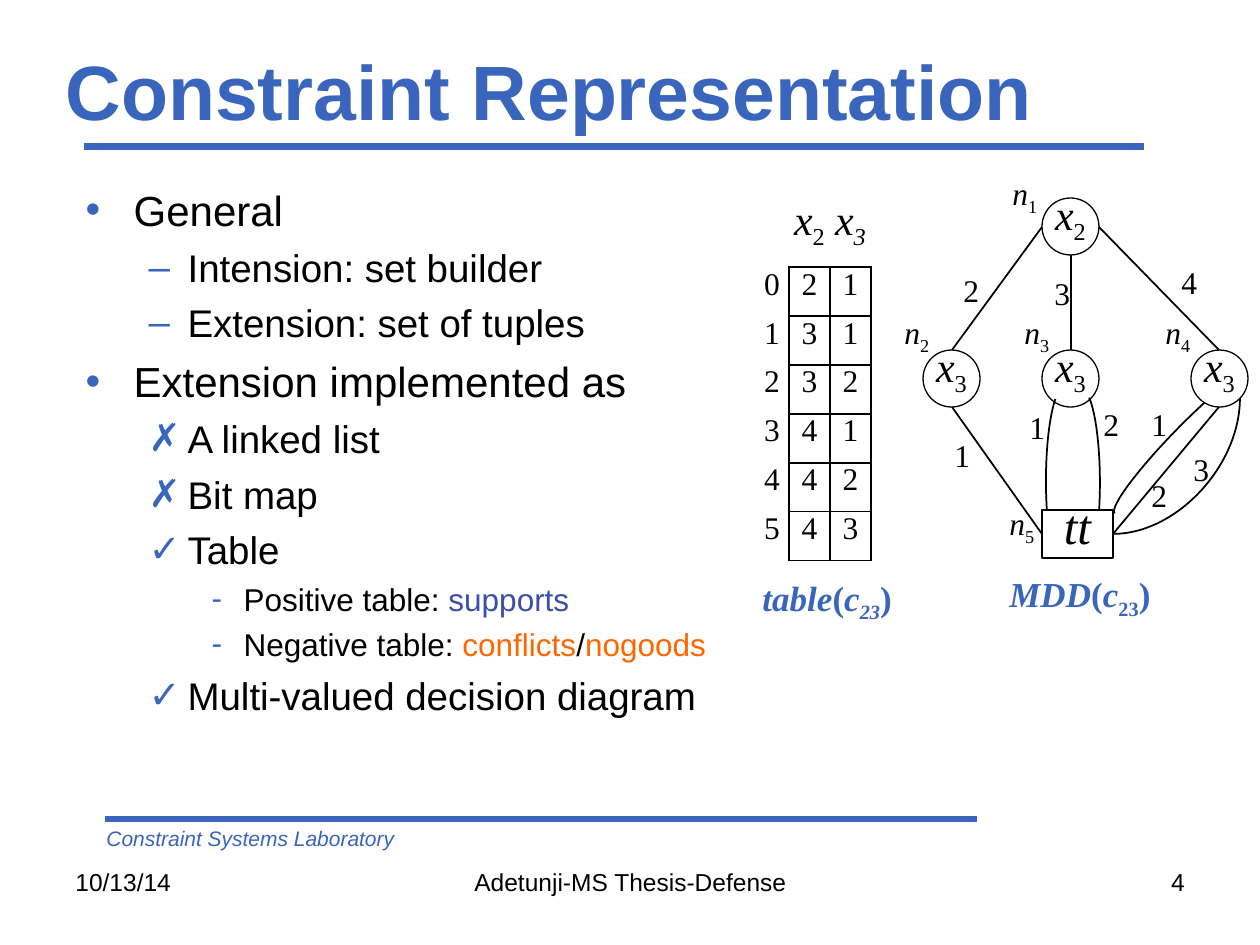
from lxml import etree
from pptx import Presentation
from pptx.dml.color import RGBColor
from pptx.enum.shapes import MSO_CONNECTOR, MSO_SHAPE
from pptx.enum.text import MSO_ANCHOR, MSO_AUTO_SIZE, PP_ALIGN
from pptx.oxml.ns import qn
from pptx.util import Pt

SCALE = 914400 / 126
LEFT, MID, RIGHT = PP_ALIGN.LEFT, PP_ALIGN.CENTER, PP_ALIGN.RIGHT
CENTER = MSO_ANCHOR.MIDDLE
FIXED = MSO_AUTO_SIZE.NONE
OVAL, RECT, ARC = MSO_SHAPE.OVAL, MSO_SHAPE.RECTANGLE, MSO_SHAPE.ARC
LINE, CURVE = MSO_CONNECTOR.STRAIGHT, MSO_CONNECTOR.CURVE
SANS, SERIF = "Arial", "Times New Roman"
HUE = {"blue": "3A65BC", "black": "000000", "white": "FFFFFF",
       "support": "3A4EAC", "conflict": "FF6600"}
DOT = 57

POINTS = [
    (0, "•", [("General", "black")]),
    (1, "–", [("Intension: set builder", "black")]),
    (1, "–", [("Extension: set of tuples", "black")]),
    (0, "•", [("Extension implemented as", "black")]),
    (1, "✗", [("A linked list", "black")]),
    (1, "✗", [("Bit map", "black")]),
    (1, "✓", [("Table", "black")]),
    (2, "-", [("Positive table: ", "black"), ("supports", "support")]),
    (2, "-", [("Negative table: ", "black"), ("conflicts", "conflict"),
              ("/", "black"), ("nogoods", "conflict")]),
    (1, "✓", [("Multi-valued decision diagram", "black")]),
]
LEVELS = [(24, 48, 48), (22, 102, 39), (18, 158, 32)]
TUPLES = [(2, 1), (3, 1), (3, 2), (4, 1), (4, 2), (4, 3)]
NAMES = [("1", 1000, 168, 74), ("2", 892, 307, 54), ("3", 1012, 307, 53),
         ("4", 1153, 307, 52), ("5", 997, 498, 74)]
VALUES = [("2", 951, 265), ("3", 1042, 268), ("4", 1169, 257),
          ("1", 942, 430), ("1", 1017, 402), ("2", 1091, 399),
          ("1", 1139, 399), ("2", 1139, 470), ("3", 1181, 444)]
ARCS = [((1046, 387, 37, 188), (165.79, 35.51), 0, True),
        ((1063, 389, 37, 188), (165.13, 34.58), 0, False),
        ((1171, 340, 28, 202), (162, 43.61), 224.2, False)]


def px(*nums):
    return [round(n * SCALE) for n in nums]


def rgb(hue):
    return RGBColor.from_string(HUE[hue])


def add_run(para, text, size, hue="black", face=SERIF, style=""):
    run = para.add_run()
    run.text = text
    font = run.font
    font.size, font.name = Pt(size), face
    font.bold, font.italic = "b" in style, "i" in style
    font.color.rgb = rgb(hue)
    if "s" in style:
        run._r.get_or_add_rPr().set("baseline", "-25000")


def add_text(slide, box, runs, size, hue="black", face=SERIF, align=LEFT):
    frame = slide.shapes.add_textbox(*px(*box)).text_frame
    frame.word_wrap = True
    para = frame.paragraphs[0]
    para.alignment = align
    for text, style in runs:
        add_run(para, text, size, hue, face, style)


def add_line(slide, start, end, hue="black", width=1, kind=LINE):
    line = slide.shapes.add_connector(kind, *px(*start, *end))
    line.line.color.rgb = rgb(hue)
    line.line.width = Pt(width)
    etree.SubElement(line.element.spPr, qn("a:effectLst"))
    return line


def add_node(slide, kind, box, runs, size):
    node = slide.shapes.add_shape(kind, *px(*box))
    node.shadow.inherit = False
    node.fill.solid()
    node.fill.fore_color.rgb = rgb("white")
    node.line.color.rgb = rgb("black")
    node.line.width = Pt(0.75)
    frame = node.text_frame
    frame.margin_left = frame.margin_right = frame.margin_top = 0
    frame.margin_bottom = px(19)[0]
    frame.vertical_anchor = CENTER
    para = frame.paragraphs[0]
    para.alignment = MID
    for text, style in runs:
        add_run(para, text, size, style=style)
    return node


def add_arc(slide, box, sweep, turn, flip):
    arc = slide.shapes.add_shape(ARC, *px(*box))
    arc.shadow.inherit = False
    arc.fill.background()
    arc.line.color.rgb = rgb("black")
    arc.line.width = Pt(1)
    arc.adjustments[0], arc.adjustments[1] = sweep
    arc.rotation = turn
    if flip:
        arc.element.spPr.find(qn("a:xfrm")).set("flipH", "1")


def place(shape, box):
    shape.left, shape.top, shape.width, shape.height = px(*box)


def fill_title(shape):
    place(shape, (53, 42, 1134, 95))
    shape.text_frame.vertical_anchor = CENTER
    shape.text_frame.auto_size = FIXED
    para = shape.text_frame.paragraphs[0]
    para.alignment = LEFT
    add_run(para, "Constraint Representation", 44, "blue", SANS, "b")


def fill_body(shape):
    place(shape, (73, 178, 1124, 620))
    frame = shape.text_frame
    frame.auto_size = FIXED
    for num, (level, mark, runs) in enumerate(POINTS):
        para = frame.add_paragraph() if num else frame.paragraphs[0]
        size, left, hang = LEVELS[level]
        para.level = level
        props = para._p.get_or_add_pPr()
        props.set("marL", str(px(left)[0]))
        props.set("indent", str(px(-hang)[0]))
        tint = etree.SubElement(props, qn("a:buClr"))
        etree.SubElement(tint, qn("a:srgbClr"), val=HUE["blue"])
        etree.SubElement(props, qn("a:buFont"), typeface=SANS)
        etree.SubElement(props, qn("a:buChar"), char=mark)
        para.space_before = Pt(size * 0.24 if num else 0)
        for text, hue in runs:
            add_run(para, text, size, hue, SANS)


def set_edges(cell, row, col):
    inner = row and col
    props = cell._tc.get_or_add_tcPr()
    edges = [("L", inner), ("R", row), ("T", inner), ("B", col)]
    for num, (side, dark) in enumerate(edges):
        edge = etree.Element(qn("a:ln" + side), w=str(Pt(1)))
        fill = etree.SubElement(edge, qn("a:solidFill"))
        hue = HUE["black" if dark else "white"]
        etree.SubElement(fill, qn("a:srgbClr"), val=hue)
        props.insert(num, edge)


def add_grid(slide):
    head = [[], [("x", "i"), ("2", "s")], [("x", "i"), ("3", "is")]]
    data = [[[(str(n), "")] for n in (num, *pair)]
            for num, pair in enumerate(TUPLES)]
    table = slide.shapes.add_table(7, 3, *px(755, 198, 116, 363)).table
    table.first_row = table.horz_banding = False
    for col, width in zip(table.columns, px(34, 41, 41)):
        col.width = width
    for row, cells in enumerate([head] + data):
        table.rows[row].height = px(49 if row else 69)[0]
        for col, runs in enumerate(cells):
            cell = table.cell(row, col)
            cell.margin_left = cell.margin_right = cell.margin_top = 0
            cell.margin_bottom = px(6)[0]
            cell.fill.background()
            set_edges(cell, row, col)
            para = cell.text_frame.paragraphs[0]
            para.alignment = MID
            for text, style in runs:
                add_run(para, text, 18 if row else 24, style=style)


def add_graph(slide):
    dots = [(1042, 198, "2"), (923, 350, "3"), (1042, 350, "3"), (1191, 350, "3")]
    for left, top, sub in dots:
        add_node(slide, OVAL, (left, top, DOT, DOT), [("x", "i"), (sub, "s")], 24)
    sink = add_node(slide, RECT, (1042, 510, 71, 48), [("tt", "i")], 28)
    add_line(slide, (952, 350), (1042, 227))
    add_line(slide, (1071, 350), (1071, 255))
    add_line(slide, (1219, 350), (1099, 227))
    add_line(slide, (952, 407), (1042, 534)).end_connect(sink, 1)
    add_line(slide, (1113, 534), (1219, 407)).begin_connect(sink, 3)
    for arc in ARCS:
        add_arc(slide, *arc)
    bend = add_line(slide, (1113, 534), (1240, 398), kind=CURVE)
    bend.element.spPr.find(qn("a:prstGeom")).set("prst", "curvedConnector2")
    for sub, left, top, width in NAMES:
        add_text(slide, (left, top, width, 50), [("n", "i"), (sub, "s")], 18)
    for text, left, top in VALUES:
        add_text(slide, (left, top, 45, 50), [(text, "")], 18)


def add_foot(slide):
    add_line(slide, (105, 819), (977, 819), "blue", 4)
    add_text(slide, (94, 819, 662, 38), [("Constraint Systems Laboratory", "i")],
             12, "blue", SANS)
    for text, left, width, align in [("10/13/14", 63, 294, LEFT),
                                     ("Adetunji-MS Thesis-Defense", 431, 399, MID),
                                     ("4", 903, 294, RIGHT)]:
        add_text(slide, (left, 861, width, 66), [(text, "")], 14, "black", SANS, align)


def main():
    deck = Presentation()
    deck.slide_width, deck.slide_height = px(1260, 945)
    slide = deck.slides.add_slide(deck.slide_layouts[1])
    fill_title(slide.shapes.title)
    fill_body(slide.placeholders[1])
    add_line(slide, (84, 147), (1144, 147), "blue", 4)
    add_foot(slide)
    add_graph(slide)
    add_grid(slide)
    for box, name, sub in [((997, 566, 175, 55), "MDD", "bs"),
                           ((750, 570, 184, 55), "table", "bis")]:
        runs = [(name, "bi"), ("(", "b"), ("c", "bi"), ("23", sub), (")", "b")]
        add_text(slide, box, runs, 20, "blue")
    deck.save("out.pptx")


if __name__ == "__main__":
    main()
